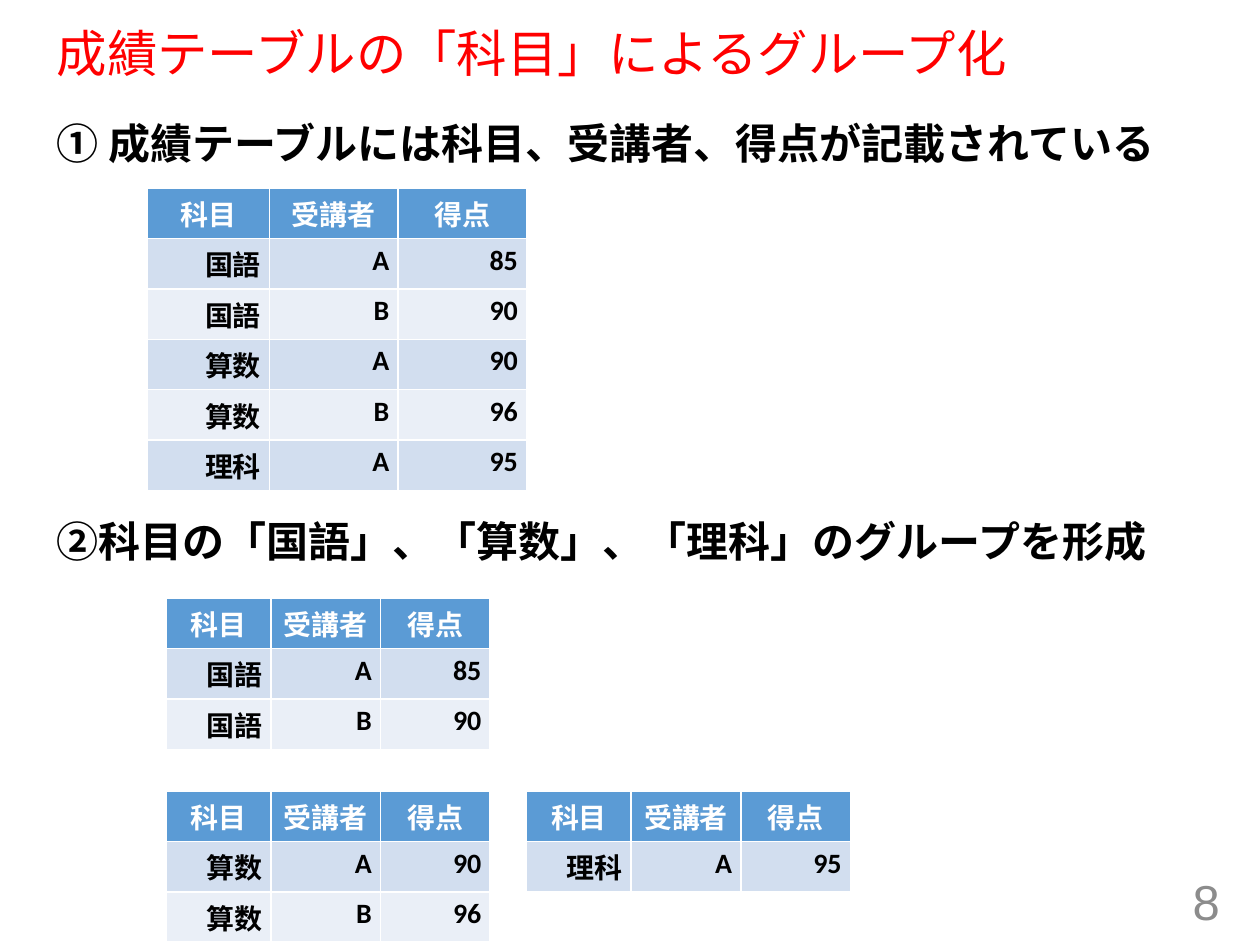
from pptx import Presentation
from pptx import util as u
from pptx.dml.color import RGBColor
from pptx.enum import text
from pptx.oxml.ns import qn

COLORS = {
    "title": "FF0000",
    "text": "000000",
    "number": "8C8C8C",
    "header": "5B9BD5",
    "header_text": "FFFFFF",
    "odd": "D2DEEF",
    "even": "EAEFF7",
}
WIDTH, HEIGHT = 10, 7.5
HEADER = ("科目", "受講者", "得点")
SCORES = (
    ("国語", "A", "85"),
    ("国語", "B", "90"),
    ("算数", "A", "90"),
    ("算数", "B", "96"),
    ("理科", "A", "95"),
)
LEFT, RIGHT = 0.132, 0.418
UPPER, LOWER = 0.633, 0.837
GROUPS = {"国語": (LEFT, UPPER), "理科": (RIGHT, LOWER), "算数": (LEFT, LOWER)}


class Deck:
    def __init__(self):
        self.prs = Presentation()
        self.prs.slide_width = u.Inches(WIDTH)
        self.prs.slide_height = u.Inches(HEIGHT)
        self.s = self.prs.slides.add_slide(self.prs.slide_layouts[1])

    def box(self, x, y, w, h):
        return (u.Inches(x * WIDTH), u.Inches(y * HEIGHT),
                u.Inches(w * WIDTH), u.Inches(h * HEIGHT))

    def place(self, sp, area, anchor):
        sp.left, sp.top, sp.width, sp.height = self.box(*area)
        tf = sp.text_frame
        tf.word_wrap = True
        tf.auto_size = text.MSO_AUTO_SIZE.NONE
        tf.vertical_anchor = anchor
        return tf

    def run(self, p, words, size, color, font="Arial", bold=False,
            align=text.PP_ALIGN.LEFT):
        p.alignment = align
        r = p.add_run()
        r.text = words
        r.font.name = font
        r.font.size = u.Pt(size)
        r.font.bold = bold
        r.font.color.rgb = RGBColor.from_string(COLORS[color])

    def title(self, words, area):
        tf = self.place(self.s.shapes.title, area, text.MSO_ANCHOR.MIDDLE)
        p = tf.paragraphs[0]
        p.line_spacing = 0.9
        self.run(p, words, 28.8, "title")

    def steps(self, items, area):
        tf = self.place(self.s.placeholders[1], area, text.MSO_ANCHOR.TOP)
        tf.margin_top = 0
        for i, (words, gap) in enumerate(items):
            p = tf.add_paragraph() if i else tf.paragraphs[0]
            p.space_before = u.Pt(gap)
            p.line_spacing = 1.0
            self.run(p, words, 24, "text", bold=True)
            pPr = p._p.get_or_add_pPr()
            pPr.set("marL", "0")
            pPr.set("indent", "0")
            pPr.append(pPr.makeelement(qn("a:buNone"), {}))

    def number(self, words, area):
        sp = self.s.shapes.add_textbox(*self.box(*area))
        tf = self.place(sp, area, text.MSO_ANCHOR.MIDDLE)
        self.run(tf.paragraphs[0], words, 28, "number", align=text.PP_ALIGN.RIGHT)

    def table(self, records, x, y, cols):
        rows = (HEADER, *records)
        area = self.box(x, y, sum(cols), 0.0455 * len(rows))
        frame = self.s.shapes.add_table(len(rows), len(cols), *area)
        tbl = frame.table
        for col, share in zip(tbl.columns, cols):
            col.width = u.Inches(share * WIDTH)
        for i, values in enumerate(rows):
            tbl.rows[i].height = u.Inches(0.25)
            fill = "header" if i == 0 else "odd" if i % 2 else "even"
            color = "text" if i else "header_text"
            align = text.PP_ALIGN.RIGHT if i else text.PP_ALIGN.CENTER
            for j, value in enumerate(values):
                cell = tbl.cell(i, j)
                cell.margin_left = cell.margin_right = u.Inches(0.07)
                cell.margin_top = cell.margin_bottom = u.Inches(0.04)
                cell.fill.solid()
                cell.fill.fore_color.rgb = RGBColor.from_string(COLORS[fill])
                self.run(cell.text_frame.paragraphs[0], value, 16, color,
                         "Calibri", True, align)
        frame.height = area[3]


def main():
    deck = Deck()
    deck.title("成績テーブルの「科目」によるグループ化", (0.035, 0.025, 0.925, 0.068))
    deck.steps([
        ("① 成績テーブルには科目、受講者、得点が記載されている", 10),
        ("②科目の「国語」、「算数」、「理科」のグループを形成", 199),
    ], (0.035, 0.124, 0.903, 0.876))
    deck.number("8", (0.753, 0.927, 0.225, 0.053))
    deck.table(SCORES, 0.117, 0.199, (0.097, 0.102, 0.102))
    for subject, (x, y) in GROUPS.items():
        records = [rec for rec in SCORES if rec[0] == subject]
        deck.table(records, x, y, (0.083, 0.087, 0.087))
    deck.prs.save("out.pptx")


if __name__ == "__main__":
    main()
